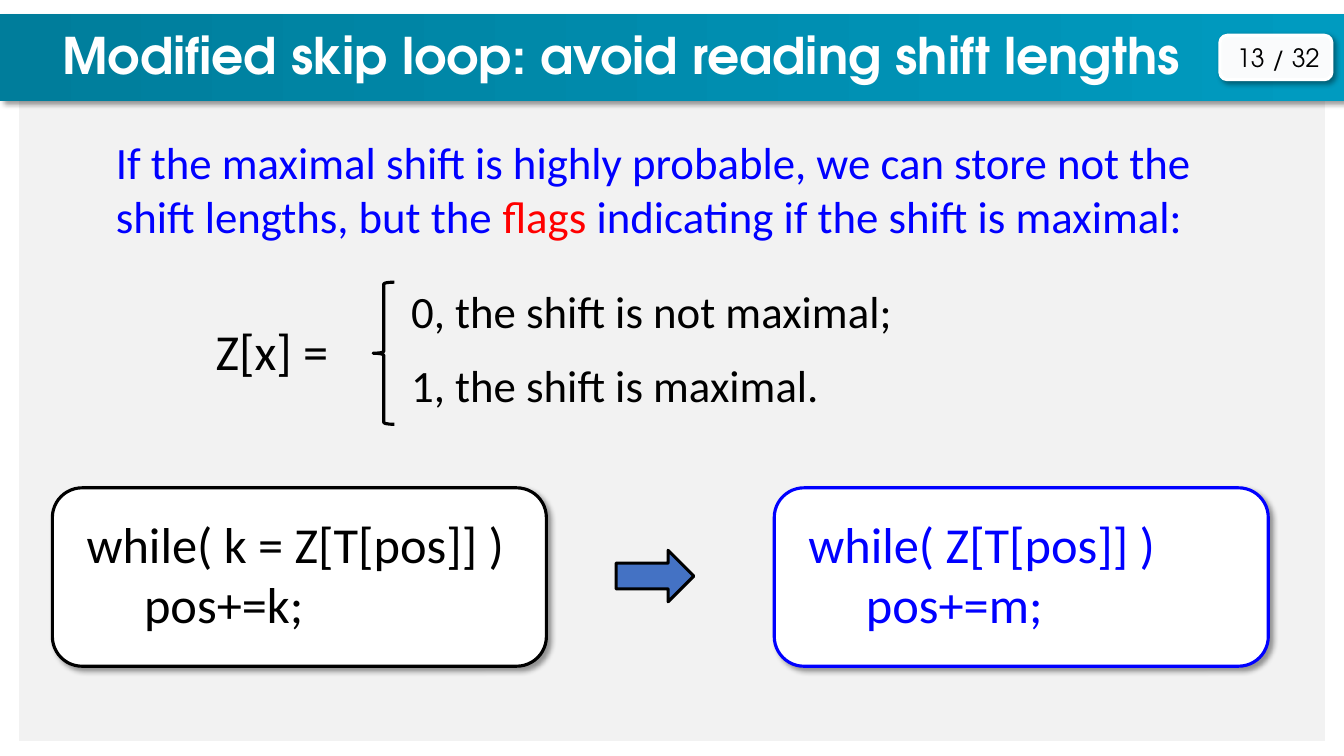
from dataclasses import dataclass

from lxml.etree import SubElement
from pptx import Presentation
from pptx.dml.color import RGBColor
from pptx.enum.shapes import MSO_SHAPE
from pptx.enum.text import MSO_ANCHOR, MSO_AUTO_SIZE, PP_ALIGN
from pptx.oxml.ns import qn
from pptx.shapes.autoshape import Shape
from pptx.slide import Slide
from pptx.util import Inches, Pt

WIDTH, HEIGHT = Inches(13.33), Inches(7.5)
COL, ROW = WIDTH / 100, HEIGHT / 100

BLACK = RGBColor(0x00, 0x00, 0x00)
WHITE = RGBColor(0xFF, 0xFF, 0xFF)
BLUE = RGBColor(0x00, 0x00, 0xFF)
RED = RGBColor(0xFF, 0x00, 0x00)
PANEL_GREY = RGBColor(0xF2, 0xF2, 0xF2)
ARROW_BLUE = RGBColor(0x44, 0x72, 0xC4)
TEAL_DARK = RGBColor(0x00, 0x7D, 0x9B)
TEAL_LIGHT = RGBColor(0x00, 0x9B, 0xC0)

BODY_FONT = "Calibri"
HEAD_FONT = "TeX Gyre Adventor"


@dataclass(frozen=True)
class Area:
    col: float
    row: float
    cols: float
    rows: float

    def emu(self) -> tuple[int, int, int, int]:
        return (round(self.col * COL), round(self.row * ROW),
                round(self.cols * COL), round(self.rows * ROW))


@dataclass(frozen=True)
class Span:
    text: str
    color: RGBColor


@dataclass(frozen=True)
class Label:
    area: Area
    lines: list[list[Span]]
    size: int
    font: str = BODY_FONT


@dataclass(frozen=True)
class CodeCard:
    col: float
    lines: tuple[str, str]
    color: RGBColor


CARDS = [
    CodeCard(57.61, ("while( Z[T[pos]] )", "pos+=m;"), BLUE),
    CodeCard(3.9, ("while( k = Z[T[pos]] )", "pos+=k;"), BLACK),
]
CASES = ["0, the shift is not maximal;", "1, the shift is maximal."]
INTRO = [
    Span("If the maximal shift is highly probable, we can store not the "
         "shift lengths, but the ", BLUE),
    Span("flags", RED),
    Span(" indicating if the shift is maximal:", BLUE),
]
LABELS = [
    Label(Area(91.3, 4.93, 8.7, 5.33), [[Span("13 / 32", BLACK)]], 18, HEAD_FONT),
    Label(Area(7.88, 17.2, 87.62, 15.73), [INTRO], 32),
    Label(Area(15.3, 41.73, 34.43, 9.47), [[Span("Z[x] =", BLACK)]], 36),
] + [
    Label(Area(29.86, 36.93 + 9.73 * i, 40, 8.53), [[Span(case, BLACK)]], 32)
    for i, case in enumerate(CASES)
]


def fill_shadow(effects) -> None:
    shadow = SubElement(effects, qn("a:outerShdw"), blurRad=str(Pt(4)),
                        dist=str(Pt(3)), dir="2700000", algn="tl", rotWithShape="0")
    color = SubElement(shadow, qn("a:srgbClr"), val=str(BLACK))
    SubElement(color, qn("a:alpha"), val="40000")


def add_block(s: Slide, kind: MSO_SHAPE, area: Area, fill: RGBColor | None,
              line: RGBColor | None = None, shadow: bool = False) -> Shape:
    sp = s.shapes.add_shape(kind, *area.emu())
    sp.shadow.inherit = False
    if shadow:
        fill_shadow(sp.element.spPr.find(qn("a:effectLst")))
    if fill is None:
        sp.fill.background()
    else:
        sp.fill.solid()
        sp.fill.fore_color.rgb = fill
    if line is None:
        sp.line.fill.background()
    else:
        sp.line.color.rgb = line
        sp.line.width = Pt(2.25)
    return sp


def add_label(s: Slide, label: Label) -> Shape:
    sp = s.shapes.add_textbox(*label.area.emu())
    tf = sp.text_frame
    tf.word_wrap = True
    for i, spans in enumerate(label.lines):
        p = tf.add_paragraph() if i else tf.paragraphs[0]
        p.font.size = Pt(label.size)
        p.font.name = label.font
        colors = {span.color for span in spans}
        if len(colors) == 1:
            p.font.color.rgb = spans[0].color
        for span in spans:
            r = p.add_run()
            r.text = span.text
            if len(colors) > 1:
                r.font.color.rgb = span.color
    return sp


def add_frame(s: Slide) -> None:
    add_block(s, MSO_SHAPE.RECTANGLE, Area(1.43, 11.2, 97.15, 86.8), PANEL_GREY)
    band = add_block(s, MSO_SHAPE.RECTANGLE, Area(0, 1.87, 100, 11.47),
                     TEAL_DARK, shadow=True)
    band.fill.gradient()
    band.fill.gradient_angle = 0
    for stop, color in zip(band.fill.gradient_stops, (TEAL_DARK, TEAL_LIGHT)):
        stop.color.rgb = color
    badge = add_block(s, MSO_SHAPE.ROUNDED_RECTANGLE, Area(90.77, 4.67, 8.33, 5.87),
                      WHITE, WHITE, True)
    fill_color = badge.element.spPr.find(qn("a:solidFill"))[0]
    SubElement(fill_color, qn("a:alpha"), val="98000")


def set_title(s: Slide) -> None:
    sp = s.shapes.title
    s.shapes.element.append(sp.element)
    sp.left, sp.top, sp.width, sp.height = Area(3.9, 2.53, 91.6, 9.47).emu()
    tf = sp.text_frame
    tf.word_wrap = True
    tf.auto_size = MSO_AUTO_SIZE.NONE
    tf.vertical_anchor = MSO_ANCHOR.TOP
    p = tf.paragraphs[0]
    p.alignment = PP_ALIGN.LEFT
    p.font.size = Pt(36)
    p.font.name = HEAD_FONT
    p.font.bold = True
    p.font.color.rgb = WHITE
    r = p.add_run()
    r.text = "Modified skip loop: avoid reading shift lengths"
    fill_shadow(SubElement(r.font._element, qn("a:effectLst")))


def add_card(s: Slide, card: CodeCard) -> None:
    add_block(s, MSO_SHAPE.ROUNDED_RECTANGLE, Area(card.col, 64.53, 36.76, 23.6),
              WHITE, card.color, True)
    lines = [[Span(line, card.color)] for line in card.lines]
    sp = add_label(s, Label(Area(card.col + 1.8, 67.2, 34.43, 17.47), lines, 36))
    body = sp.text_frame.paragraphs[1]
    body._p.get_or_add_pPr().set("marL", str(Inches(0.57)))


def main() -> None:
    prs = Presentation()
    prs.slide_width, prs.slide_height = WIDTH, HEIGHT
    s = prs.slides.add_slide(prs.slide_layouts[5])
    add_frame(s)
    set_title(s)
    for card in CARDS:
        add_card(s, card)
    for label in LABELS:
        add_label(s, label)
    add_block(s, MSO_SHAPE.LEFT_BRACE, Area(27.76, 37.33, 1.58, 18.8), None, BLACK)
    add_block(s, MSO_SHAPE.RIGHT_ARROW, Area(45.84, 72.8, 5.78, 6.8),
              ARROW_BLUE, BLACK)
    prs.save("out.pptx")


if __name__ == "__main__":
    main()
